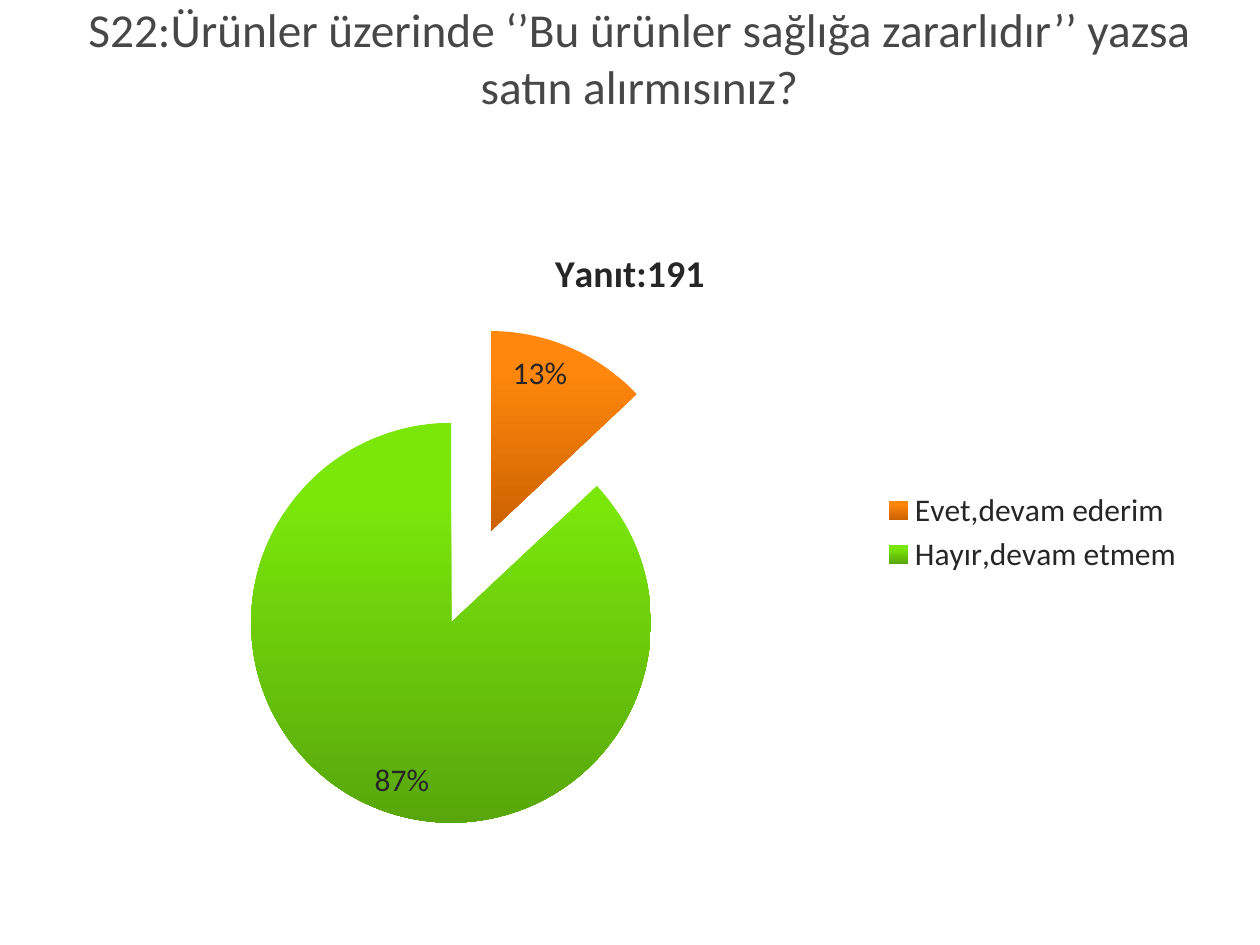
"""Build a survey slide with a title and an exploded pie chart."""
from lxml.etree import SubElement
from pptx import Presentation
from pptx.chart.data import CategoryChartData
from pptx.dml.color import RGBColor
from pptx.enum.chart import XL_CHART_TYPE, XL_LABEL_POSITION, XL_LEGEND_POSITION
from pptx.enum.text import MSO_ANCHOR, MSO_AUTO_SIZE, PP_ALIGN
from pptx.oxml.ns import qn
from pptx.util import Inches, Pt

FONT = "Calibri"
TITLE_GRAY = RGBColor(0x47, 0x47, 0x47)
TEXT_GRAY = RGBColor(0x26, 0x26, 0x26)
ORANGE = (RGBColor(0xFF, 0x87, 0x0D), RGBColor(0xCC, 0x62, 0x00))
GREEN = (RGBColor(0x7A, 0xE6, 0x0A), RGBColor(0x58, 0xA6, 0x0C))

presentation = Presentation()
presentation.slide_width = Inches(10)
presentation.slide_height = Inches(7.5)
slide = presentation.slides.add_slide(presentation.slide_layouts[5])

title = slide.shapes.title
title.left, title.top = Inches(0.48), Inches(0.08)
title.width, title.height = Inches(9.19), Inches(0.75)
title_frame = title.text_frame
title_frame.text = "S22:Ürünler üzerinde ‘’Bu ürünler sağlığa zararlıdır’’ yazsa satın alırmısınız?"
title_frame.word_wrap = True
title_frame.auto_size = MSO_AUTO_SIZE.NONE
title_frame.vertical_anchor = MSO_ANCHOR.MIDDLE
title_paragraph = title_frame.paragraphs[0]
title_paragraph.alignment = PP_ALIGN.CENTER
title_font = title_paragraph.runs[0].font
title_font.name = FONT
title_font.size = Pt(27)
title_font.color.rgb = TITLE_GRAY

chart_data = CategoryChartData()
chart_data.categories = ["Evet,devam ederim", "Hayır,devam etmem"]
chart_data.add_series("Series 1", (13, 87))
chart = slide.shapes.add_chart(
    XL_CHART_TYPE.PIE, Inches(0.5), Inches(1.75), Inches(9), Inches(4.95), chart_data
).chart
chart.font.name = FONT
chart.font.size = Pt(18)
chart.font.color.rgb = TEXT_GRAY

chart.has_title = True
chart.chart_title.include_in_layout = False
chart_title_frame = chart.chart_title.text_frame
chart_title_frame.text = "Yanıt:191"
chart_title_font = chart_title_frame.paragraphs[0].runs[0].font
chart_title_font.name = FONT
chart_title_font.size = Pt(21.6)
chart_title_font.bold = True
chart_title_font.color.rgb = TEXT_GRAY

chart.has_legend = True
chart.legend.position = XL_LEGEND_POSITION.RIGHT
chart.legend.include_in_layout = False

plot = chart.plots[0]
plot.vary_by_categories = True
series = plot.series[0]
explosion = SubElement(series._element, qn("c:explosion"), val="25")
series._element.find(qn("c:tx")).addnext(explosion)

for index, colors in enumerate((ORANGE, GREEN)):
    fill = series.points[index].format.fill
    fill.gradient()
    fill.gradient_angle = 270
    for stop, color, position in zip(fill.gradient_stops, colors, (0.2, 1)):
        stop.color.rgb = color
        stop.position = position

labels = series.data_labels
labels.show_percentage = True
labels.show_value = False
labels.number_format = "0%"
labels.number_format_is_linked = False
labels.position = XL_LABEL_POSITION.INSIDE_END
labels.font.name = FONT
labels.font.size = Pt(18)
labels.font.color.rgb = TEXT_GRAY

presentation.save("out.pptx")
